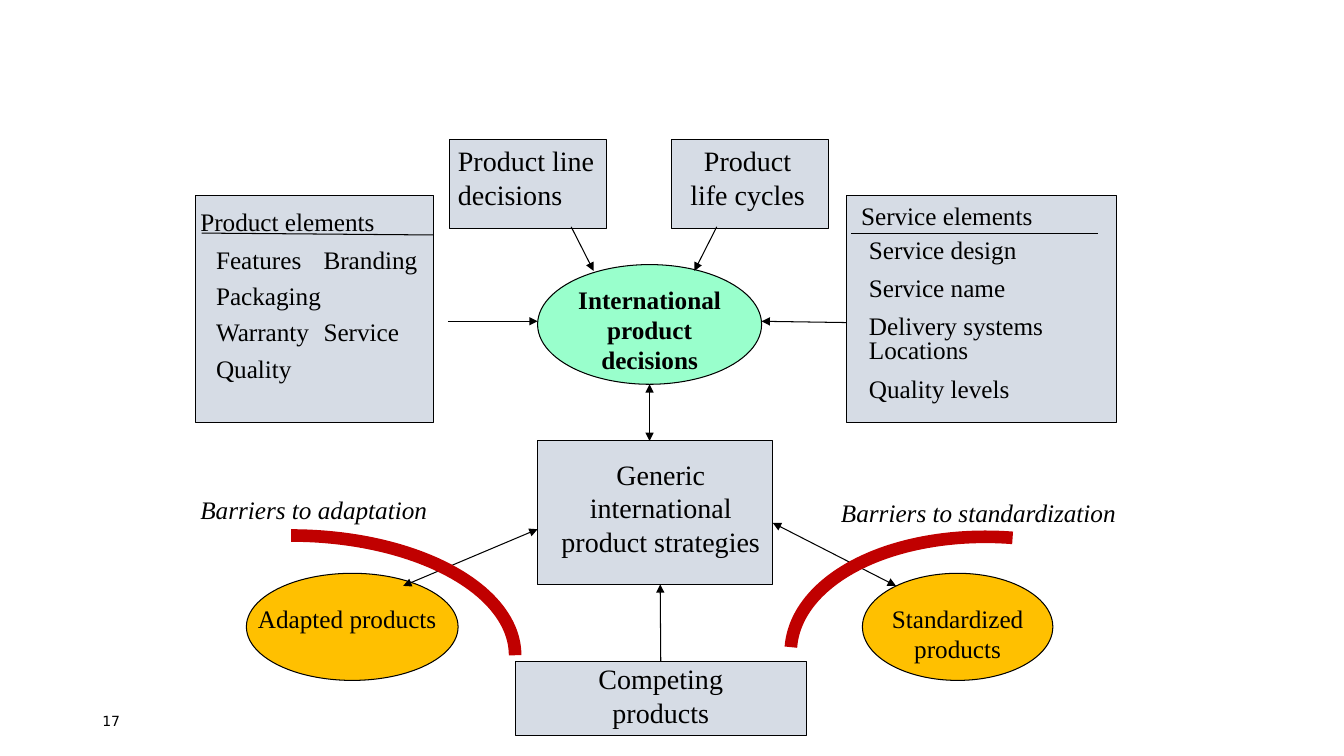
import lxml.etree
import pptx
import pptx.dml.color
import pptx.enum.shapes
import pptx.enum.text
import pptx.oxml.ns
import pptx.util

RGB = pptx.dml.color.RGBColor
BLACK = RGB(0x00, 0x00, 0x00)
GREY = RGB(0xD6, 0xDC, 0xE5)
MINT = RGB(0x99, 0xFF, 0xCC)
AMBER = RGB(0xFF, 0xC0, 0x00)
RED = RGB(0xC0, 0x00, 0x00)

SHAPE = pptx.enum.shapes.MSO_SHAPE
ALIGN = pptx.enum.text.PP_ALIGN
ANCHOR = pptx.enum.text.MSO_ANCHOR
CENTER = ALIGN.CENTER
Pt = pptx.util.Pt

COLUMNS = ROWS = 120


class Diagram:
    """Draws on one slide; all positions are columns and rows of the grid."""

    font = "Times New Roman"
    thin = Pt(0.75)

    def __init__(self, prs):
        self.s = prs.slides.add_slide(prs.slide_layouts[6])
        self.col = prs.slide_width / COLUMNS
        self.row = prs.slide_height / ROWS

    def point(self, x, y):
        return round(x * self.col), round(y * self.row)

    def shape(self, kind, x, y, w, h, fill=GREY):
        sp = self.s.shapes.add_shape(kind, *self.point(x, y), *self.point(w, h))
        sp.shadow.inherit = False
        if fill is None:
            sp.fill.background()
        else:
            sp.fill.solid()
            sp.fill.fore_color.rgb = fill
        sp.line.color.rgb = BLACK
        sp.line.width = self.thin
        return sp

    def barrier(self, cx, cy, rx, ry, rotation=0):
        """Thick quarter arc of the ellipse around (cx, cy)."""
        sp = self.shape(SHAPE.ARC, cx - rx, cy - ry, 2 * rx, 2 * ry, None)
        sp.rotation = rotation
        sp.line.color.rgb = RED
        sp.line.width = Pt(9)

    def text(self, x, y, w, h, lines, size=18, align=ALIGN.LEFT, bold=False,
             italic=False, font=font, anchor=ANCHOR.TOP, spacing=None,
             before=0, tab=None):
        sp = self.s.shapes.add_textbox(*self.point(x, y), *self.point(w, h))
        tf = sp.text_frame
        tf.word_wrap = True
        tf.vertical_anchor = anchor
        tf.text = lines
        for p in tf.paragraphs:
            p.alignment = align
            p.line_spacing = spacing
            p.space_before = Pt(before)
            p.font.name, p.font.size = font, Pt(size)
            p.font.bold, p.font.italic = bold, italic
            p.font.color.rgb = BLACK
            if tab:
                self.tab_stop(p, tab)

    def tab_stop(self, p, x):
        qn = pptx.oxml.ns.qn
        tabs = lxml.etree.Element(qn("a:tabLst"))
        lxml.etree.SubElement(tabs, qn("a:tab"), pos=str(round(x * self.col)), algn="l")
        p._p.get_or_add_pPr().find(qn("a:defRPr")).addprevious(tabs)

    def line(self, start, end, head=False, tail=False):
        c = self.s.shapes.add_connector(
            pptx.enum.shapes.MSO_CONNECTOR.STRAIGHT,
            *self.point(*start), *self.point(*end))
        c.line.color.rgb = BLACK
        c.line.width = self.thin
        qn = pptx.oxml.ns.qn
        for tag, wanted in (("a:headEnd", head), ("a:tailEnd", tail)):
            if wanted:
                lxml.etree.SubElement(c.line._get_or_add_ln(), qn(tag), type="triangle")
        lxml.etree.SubElement(c._element.spPr, qn("a:effectLst"))
        return c


def main():
    prs = pptx.Presentation()
    prs.slide_width = pptx.util.Inches(13.33)
    prs.slide_height = pptx.util.Inches(7.5)
    d = Diagram(prs)

    d.text(8.25, 111.2, 27, 6.4, "17", 10, font="DejaVu Sans", anchor=ANCHOR.MIDDLE)

    # Boxes and ovals
    for x, y, w, h in ((40.15, 22.2, 14, 14), (60, 22.2, 14, 14),
                       (17.5, 31, 21.25, 36), (75.6, 31, 24.1, 36),
                       (48, 70, 21, 22.75)):
        d.shape(SHAPE.RECTANGLE, x, y, w, h)
    competing = d.shape(SHAPE.RECTANGLE, 46, 105, 26, 11.7)
    for x, y, w, h, fill in ((48, 42, 20, 19, MINT), (77, 91, 17, 17, AMBER),
                             (22, 91, 18.9, 17, AMBER)):
        d.shape(SHAPE.OVAL, x, y, w, h, fill)

    # Rules under the two headings
    d.line((18, 37), (38.7, 37.3))
    d.line((76, 37), (98, 37))

    # Arrows
    for start, end in (((51, 36), (53, 43)), ((64, 36), (62, 43)),
                       ((75.6, 51.2), (68, 51)), ((40, 51), (48, 51))):
        d.line(start, end, tail=True)
    for start, end in (((58, 61), (58, 70)), ((48, 84), (36, 93)),
                       ((69, 83), (80, 93))):
        d.line(start, end, head=True, tail=True)
    d.line((59, 105), (58.95, 92.75), tail=True).begin_connect(competing, 0)

    # Labels
    d.text(40, 22, 16, 12.3, "Product line decisions", 20)
    d.text(60, 22, 13.5, 12.3, "Product life cycles", 20, CENTER)
    d.text(49, 71.8, 20, 17.8, "Generic international product strategies", 20, CENTER)
    d.text(48, 104.2, 22, 12.3, "Competing products", 20, CENTER)
    d.text(49, 44.3, 18, 16.2, "International product decisions", align=CENTER, bold=True)
    d.text(22, 95, 18, 6.4, "Adapted products", align=CENTER)
    d.text(76, 95, 19, 11.2, "Standardized products", align=CENTER)
    d.text(17, 32, 28, 6.4, "Product elements")
    d.text(76, 31, 24, 6.4, "Service elements")
    d.text(18.4, 37, 20, 25,
           "Features\tBranding\vPackaging\vWarranty\tService\vQuality",
           spacing=1.2, tab=9.6)
    d.text(76.7, 37.3, 24, 28,
           "Service design\nService name\nDelivery systems Locations\nQuality levels",
           spacing=0.8, before=10)

    # Barriers
    d.barrier(26, 104, 20, 19)
    d.barrier(89.55, 105.3, 11.25, 33.75, rotation=274.4)
    d.text(17, 77.6, 28, 6.4, "Barriers to adaptation", italic=True)
    d.text(74.2, 78.2, 28, 6.4, "Barriers to standardization", italic=True)

    prs.save("out.pptx")


if __name__ == "__main__":
    main()
